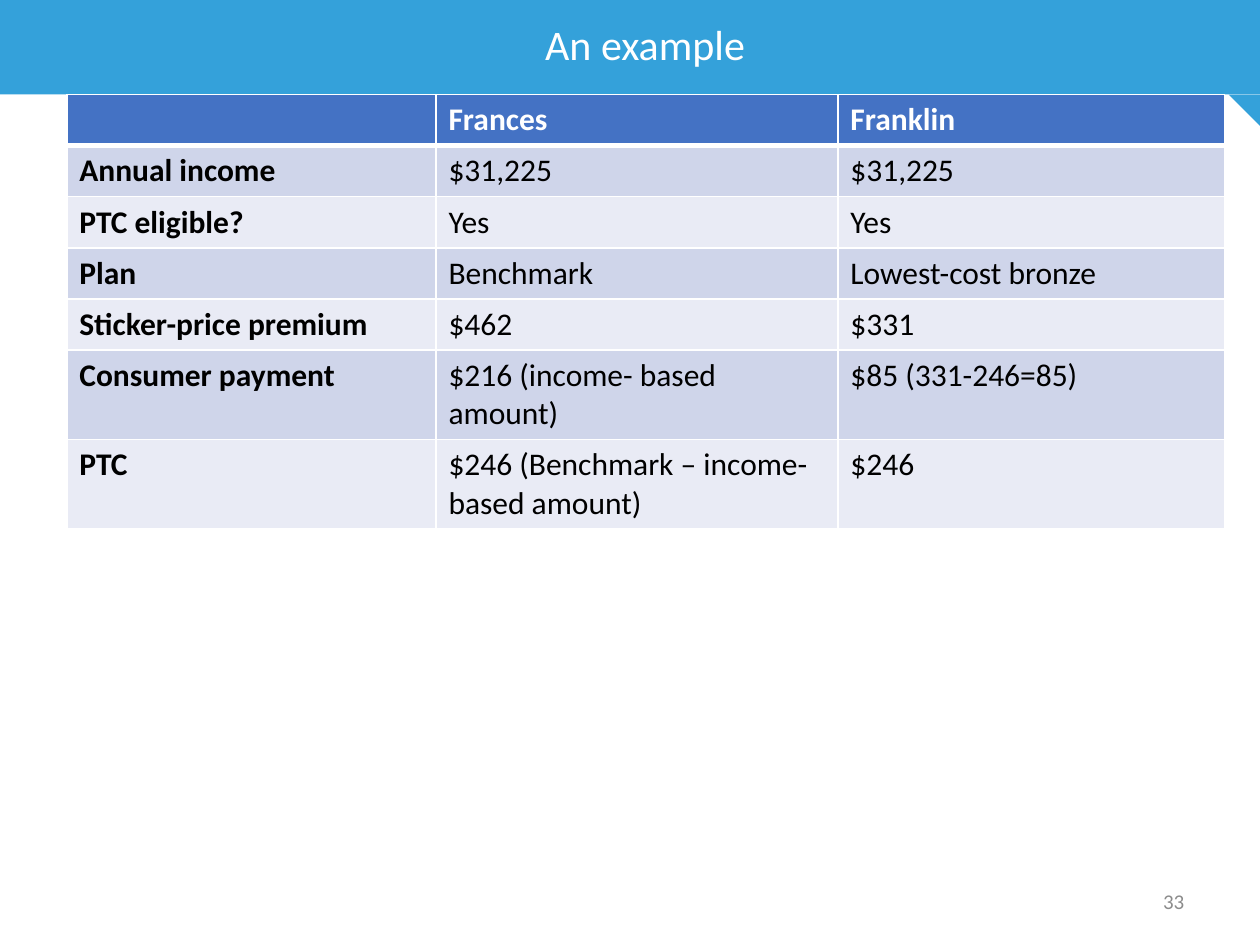
from lxml.etree import SubElement
from pptx import Presentation
from pptx.dml.color import RGBColor
from pptx.enum.shapes import MSO_SHAPE
from pptx.enum.text import MSO_ANCHOR, PP_ALIGN
from pptx.oxml.ns import qn
from pptx.util import Inches, Pt

TITLE = "An example"
PAGE = "33"
ROWS = [
    ("", "Frances", "Franklin"),
    ("Annual income", "$31,225", "$31,225"),
    ("PTC eligible?", "Yes", "Yes"),
    ("Plan", "Benchmark", "Lowest-cost bronze"),
    ("Sticker-price premium", "$462", "$331"),
    ("Consumer payment", "$216 (income- based amount)", "$85 (331-246=85)"),
    ("PTC", "$246 (Benchmark – income-based amount)", "$246"),
]
COLORS = {
    "banner": "34A1DA", "header": "4472C4", "odd": "CFD5EA", "even": "E9EBF5",
    "white": "FFFFFF", "text": "000000", "page": "8C8C8C",
}
WIDTH, HEIGHT = 10, 7.5
BANNER = HEIGHT / 10
CORNER = WIDTH / 40
LEFT = 0.53
COLUMNS = (2.93, 3.19, 3.07)
LINE, PADDING = 0.305, 0.1
TALL_ROWS = (5, 6)


def rgb(name):
    return RGBColor.from_string(COLORS[name])


def box(*lengths):
    return [Inches(n) for n in lengths]


def format_text(p, color, **font):
    for key, value in {"name": "Calibri", **font}.items():
        setattr(p.font, key, value)
    p.font.color.rgb = rgb(color)


def add_banner_shape(s, kind, *lengths):
    sp = s.shapes.add_shape(kind, *box(*lengths))
    sp.shadow.inherit = False
    sp.fill.solid()
    sp.fill.fore_color.rgb = rgb("banner")
    sp.line.fill.background()
    return sp


def add_borders(cell, bottom):
    """Draw white cell borders; they must come before the fill in the XML."""
    tcPr = cell._tc.get_or_add_tcPr()
    for side, width in (("L", 1), ("R", 1), ("T", 1), ("B", bottom)):
        ln = SubElement(tcPr, qn(f"a:ln{side}"), w=str(Pt(width)))
        fill = SubElement(ln, qn("a:solidFill"))
        SubElement(fill, qn("a:srgbClr"), val=COLORS["white"])


def add_table(s):
    heights = [PADDING + LINE * (2 if i in TALL_ROWS else 1) for i in range(len(ROWS))]
    frame = s.shapes.add_table(len(ROWS), len(COLUMNS),
                               *box(LEFT, BANNER, sum(COLUMNS), sum(heights)))
    table = frame.table
    table.horz_banding = False
    for column, width in zip(table.columns, COLUMNS):
        column.width = Inches(width)
    for i, (row, height) in enumerate(zip(ROWS, heights)):
        table.rows[i].height = Inches(height)
        band = "header" if i == 0 else "odd" if i % 2 else "even"
        for j, text in enumerate(row):
            cell = table.cell(i, j)
            add_borders(cell, bottom=3 if i == 0 else 1)
            cell.fill.solid()
            cell.fill.fore_color.rgb = rgb(band)
            cell.text = text
            format_text(cell.text_frame.paragraphs[0], "text" if i else "white",
                        size=Pt(18), bold=i == 0 or j == 0)


def place_title(s):
    title = s.shapes.title
    s.shapes._spTree.append(title._element)  # in front of the banner
    title.left, title.top, title.width, title.height = box(LEFT, 0, 8.93, BANNER)
    tf = title.text_frame
    tf.text = TITLE
    tf.vertical_anchor = MSO_ANCHOR.MIDDLE
    p = tf.paragraphs[0]
    p.alignment, p.line_spacing = PP_ALIGN.CENTER, 0.9
    p._p.get_or_add_pPr().set("marL", str(Inches(0.25)))
    format_text(p, "white", size=Pt(24))


def add_page_number(s):
    tf = s.shapes.add_textbox(*box(9.03, 6.95, 0.57, 0.4)).text_frame
    tf.word_wrap = True
    tf.vertical_anchor = MSO_ANCHOR.MIDDLE
    tf.text = PAGE
    p = tf.paragraphs[0]
    p.alignment = PP_ALIGN.CENTER
    format_text(p, "page", size=Pt(12))


def main():
    prs = Presentation()
    prs.slide_width, prs.slide_height = box(WIDTH, HEIGHT)
    s = prs.slides.add_slide(prs.slide_layouts[5])
    add_banner_shape(s, MSO_SHAPE.RECTANGLE, 0, 0, WIDTH, BANNER)
    corner = add_banner_shape(s, MSO_SHAPE.RIGHT_TRIANGLE,
                              WIDTH - CORNER, BANNER, CORNER, CORNER)
    corner.rotation = 180
    add_table(s)
    add_page_number(s)
    place_title(s)
    prs.save("out.pptx")


if __name__ == "__main__":
    main()
